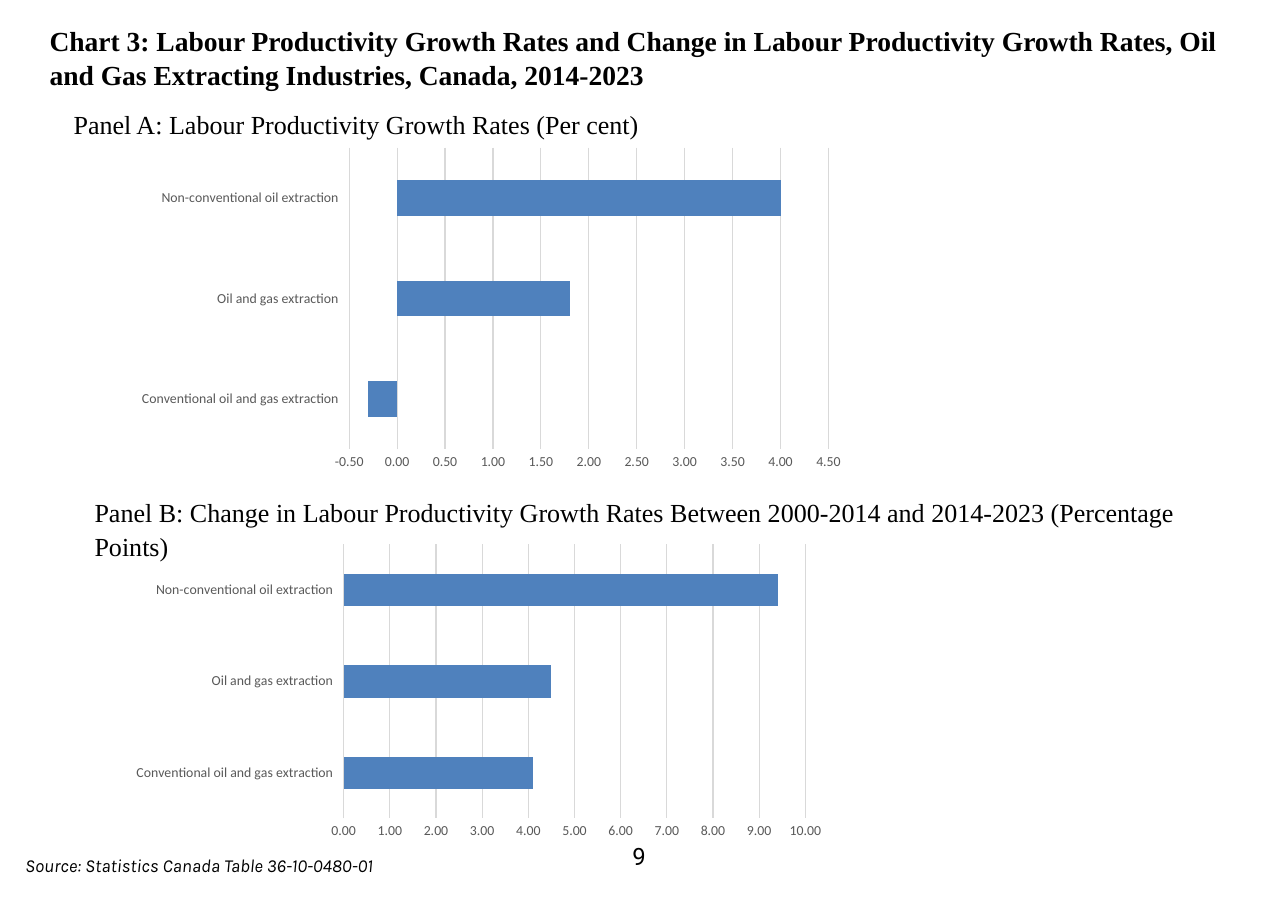
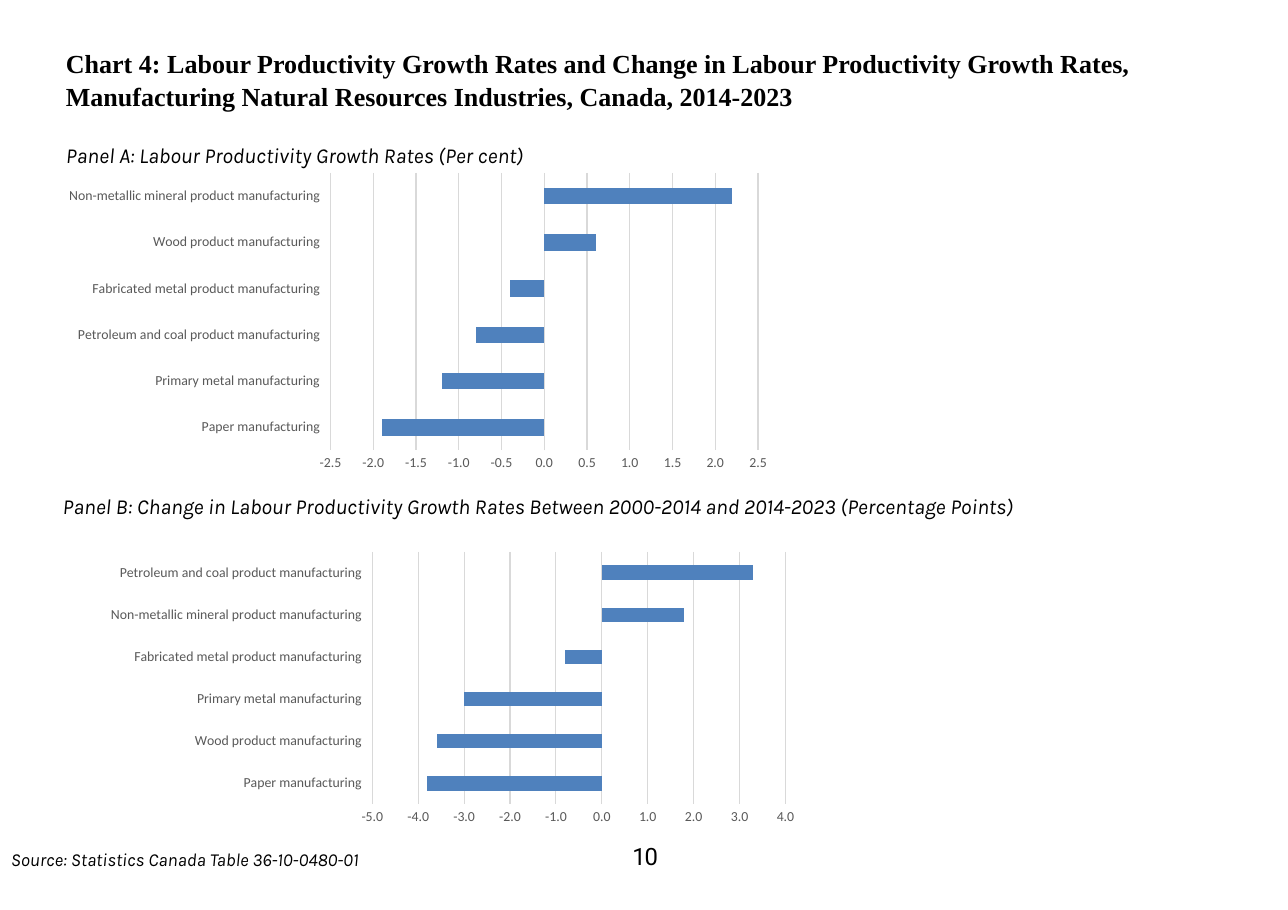
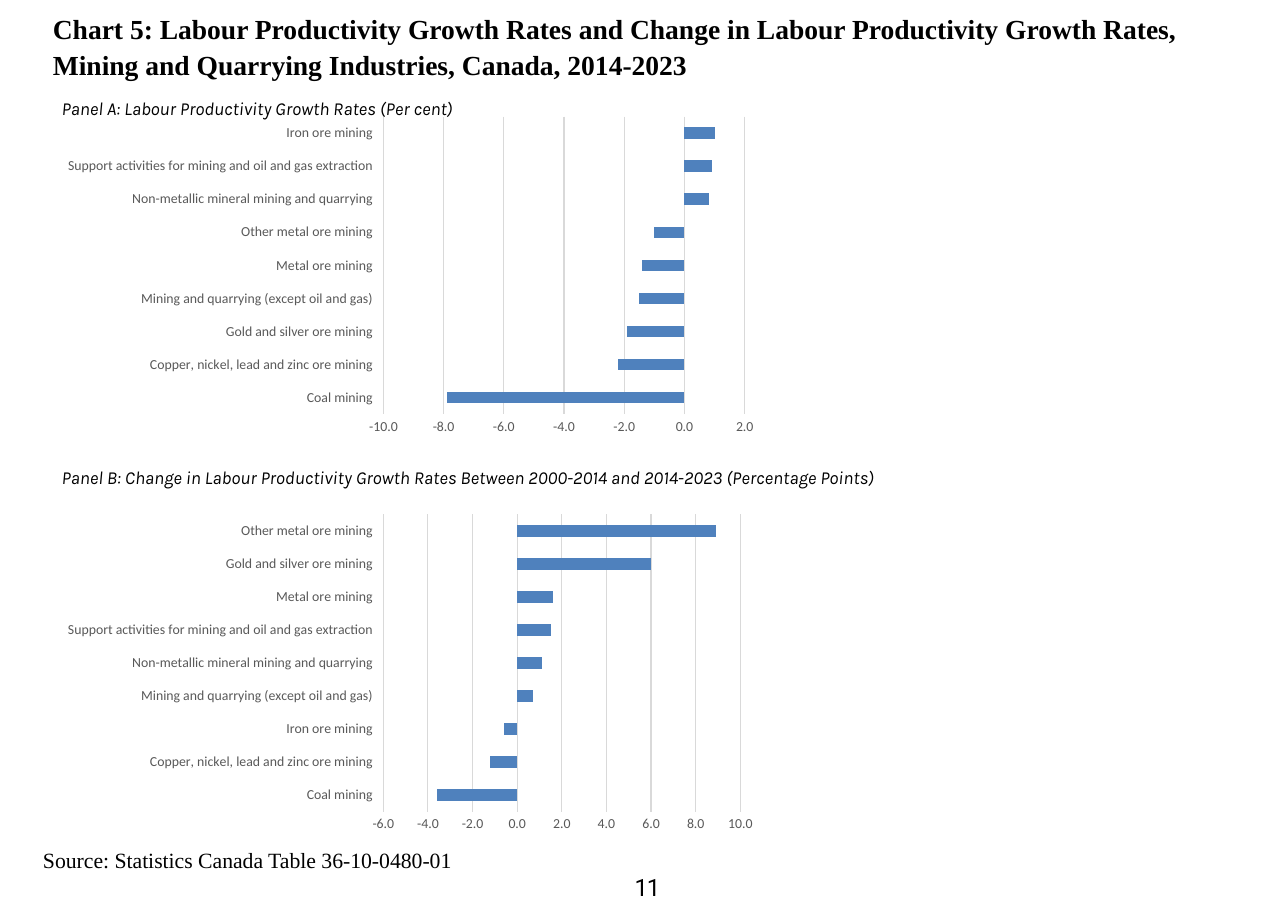
from dataclasses import dataclass

from pptx import Presentation
from pptx.chart.data import CategoryChartData
from pptx.dml.color import RGBColor
from pptx.enum.chart import XL_CHART_TYPE, XL_TICK_LABEL_POSITION, XL_TICK_MARK
from pptx.oxml import parse_xml
from pptx.oxml.ns import nsdecls, qn
from pptx.util import Inches, Pt


@dataclass(frozen=True)
class Theme:
    """Colours, fonts and type sizes shared by all slides."""
    text: str = "000000"
    label: str = "595959"
    grid: str = "D9D9D9"
    bar: str = "4F81BD"
    paper: str = "FFFFFF"
    serif: str = "Times New Roman"
    sans: str = "Karla"
    number: str = "Roboto"
    chart: str = "Calibri"
    title_size: float = 18
    number_size: float = 15.6
    source_size: float = 12
    axis_size: float = 9
    line: float = 0.75


T = Theme()
INSET = (0.1, 0.05)
PANEL_A = "Panel A: Labour Productivity Growth Rates (Per cent)"
PANEL_B = ("Panel B: Change in Labour Productivity Growth Rates Between "
           "2000-2014 and 2014-2023 (Percentage Points)")
TITLE = ("Chart {}: Labour Productivity Growth Rates and Change in Labour "
         "Productivity Growth Rates, {} Industries, Canada, 2014-2023")
SOURCE = "Source: Statistics Canada Table 36-10-0480-01"


def add_text(s, text, at, size, font, bold=False, italic=False, inset=INSET,
             spacing=None, before=0, indent=0, tracking=0):
    """Add a one-paragraph text box; at is left, top, width, height."""
    tf = s.shapes.add_textbox(*map(Inches, at)).text_frame
    tf.word_wrap = True
    tf.margin_left = tf.margin_right = Inches(inset[0])
    tf.margin_top = tf.margin_bottom = Inches(inset[1])
    p = tf.paragraphs[0]
    p.line_spacing = spacing
    p.space_before = Pt(before)
    if indent:
        pPr = p._p.get_or_add_pPr()
        pPr.set("marL", str(Inches(indent)))
        pPr.set("indent", "0")
    r = p.add_run()
    r.text = text
    style_font(r.font, size, font, T.text)
    r.font.bold, r.font.italic = bold, italic
    if tracking:
        r._r.get_or_add_rPr().set("spc", str(round(tracking * 100)))


def style_font(font, size, name, color):
    font.size, font.name = Pt(size), name
    font.color.rgb = RGBColor.from_string(color)


def style_line(line):
    line.color.rgb = RGBColor.from_string(T.grid)
    line.width = Pt(T.line)


class Deck:
    """Holds the presentation, its style and the current slide."""

    def __init__(self):
        self.prs = Presentation()
        self.prs.slide_width, self.prs.slide_height = Inches(11.69), Inches(8.26)
        self.s = None

    def slide(self):
        self.s = self.prs.slides.add_slide(self.prs.slide_layouts[6])
        fill = self.s.background.fill
        fill.solid()
        fill.fore_color.rgb = RGBColor.from_string(T.paper)

    def title(self, number, industries, at, size=T.title_size, spacing=1.07, **fmt):
        add_text(self.s, TITLE.format(number, industries), at, size, T.serif,
                 bold=True, spacing=spacing, **fmt)

    def panel(self, text, at, size, font=T.sans, spacing=1.07):
        add_text(self.s, text, at, size, font, italic=font == T.sans, spacing=spacing)

    def source(self, at, size=T.source_size, font=T.sans, **fmt):
        add_text(self.s, SOURCE, at, size, font, italic=font == T.sans, **fmt)

    def page_number(self, number, left=5.66, top=7.64):
        add_text(self.s, str(number), (left, top, 0.34, 0.26), T.number_size,
                 T.number, inset=(0, 0), before=0.5, indent=0.08, tracking=-0.7)

    def bar_chart(self, at, plot, scale, rows, fmt="0.0"):
        """plot is the plot area's left offset and width; scale is min, max, step."""
        data = CategoryChartData()
        data.categories = [name for name, _ in rows]
        data.add_series("Series 1", [value for _, value in rows])
        chart = self.s.shapes.add_chart(
            XL_CHART_TYPE.BAR_CLUSTERED, *map(Inches, at), data).chart
        chart.has_legend = chart.has_title = False
        style_font(chart.font, T.axis_size, T.chart, T.label)

        # Bars
        bars = chart.plots[0]
        bars.gap_width, bars.vary_by_categories = 182, False
        series = bars.series[0]
        series.invert_if_negative = False
        series.format.fill.solid()
        series.format.fill.fore_color.rgb = RGBColor.from_string(T.bar)

        # Axes
        cat, val = chart.category_axis, chart.value_axis
        for axis in (cat, val):
            axis.major_tick_mark = axis.minor_tick_mark = XL_TICK_MARK.NONE
            style_font(axis.tick_labels.font, T.axis_size, T.chart, T.label)
        cat.tick_label_position = XL_TICK_LABEL_POSITION.LOW
        style_line(cat.format.line)
        val.minimum_scale, val.maximum_scale, val.major_unit = scale
        val.tick_labels.number_format = fmt
        val.tick_labels.number_format_is_linked = False
        val.format.line.fill.background()
        val.has_major_gridlines = True
        style_line(val.major_gridlines.format.line)
        self.place_plot(chart, at, plot)

    @staticmethod
    def place_plot(chart, at, plot):
        """Fix the plot area, leaving room for the value labels below."""
        _, _, width, height = at
        top, bottom = 0.05, 0.25
        sizes = {"x": plot[0] / width, "y": top / height,
                 "w": plot[1] / width, "h": (height - top - bottom) / height}
        parts = "".join(f'<c:{k} val="{v:.4f}"/>' for k, v in sizes.items())
        area = chart.element.find(".//" + qn("c:plotArea"))
        for old in area.findall(qn("c:layout")):
            area.remove(old)
        area.insert(0, parse_xml(
            f'<c:layout {nsdecls("c")}><c:manualLayout>'
            '<c:layoutTarget val="inner"/><c:xMode val="edge"/><c:yMode val="edge"/>'
            f'{parts}</c:manualLayout></c:layout>'))


# Category names, from the bottom bar up
OIL = ("Conventional oil and gas extraction", "Oil and gas extraction",
       "Non-conventional oil extraction")
PAPER, PRIMARY, PETROLEUM, FABRICATED, WOOD, MINERAL = (
    f"{name} manufacturing" for name in (
        "Paper", "Primary metal", "Petroleum and coal product",
        "Fabricated metal product", "Wood product", "Non-metallic mineral product"))
COAL, COPPER, GOLD = ("Coal mining", "Copper, nickel, lead and zinc ore mining",
                      "Gold and silver ore mining")
QUARRY, METAL, OTHER = ("Mining and quarrying (except oil and gas)",
                        "Metal ore mining", "Other metal ore mining")
NONMETAL, SUPPORT, IRON = (
    "Non-metallic mineral mining and quarrying",
    "Support activities for mining and oil and gas extraction", "Iron ore mining")


def oil_and_gas(d):
    d.slide()
    d.title(3, "Oil and Gas Extracting", (0.43, 0.2, 10.83, 0.97), spacing=1.03,
            inset=(0, 0.01), before=0.7, indent=0.02)
    d.panel(PANEL_A, (0.57, 0.94, 9.36, 0.4), 17, T.serif, spacing=None)
    d.page_number(9)
    d.panel(PANEL_B, (0.76, 4.44, 10.5, 0.69), 17, T.serif)
    d.source((0.13, 7.7, 5.85, 0.3))
    d.bar_chart((1.1, 1.29, 6.67, 3.04), (2.07, 4.35), (-0.5, 4.5, 0.5),
                list(zip(OIL, (-0.3, 1.8, 4))), fmt="0.00")
    d.bar_chart((1.11, 4.89, 6.48, 2.79), (2.01, 4.19), (0, 10, 1),
                list(zip(OIL, (4.1, 4.5, 9.4))), fmt="0.00")


def manufacturing(d):
    d.slide()
    d.title(4, "Manufacturing Natural Resources", (0.5, 0.36, 10.7, 0.7), size=17)
    d.page_number(10)
    d.panel(PANEL_A, (0.5, 1.22, 5.85, 0.34), 14)
    d.bar_chart((0.47, 1.52, 6.62, 2.82), (2.53, 3.88), (-2.5, 2.5, 0.5), [
        (PAPER, -1.9), (PRIMARY, -1.2), (PETROLEUM, -0.8),
        (FABRICATED, -0.4), (WOOD, 0.6), (MINERAL, 2.2)])
    d.panel(PANEL_B, (0.47, 4.41, 10.48, 0.34), 14)
    d.bar_chart((0.85, 4.96, 6.5, 2.59), (2.53, 3.75), (-5, 4, 1), [
        (PAPER, -3.8), (WOOD, -3.6), (PRIMARY, -3),
        (FABRICATED, -0.8), (MINERAL, 1.8), (PETROLEUM, 3.3)])
    d.source((0, 7.65, 5.85, 0.3))


def mining(d):
    d.slide()
    d.title(5, "Mining and Quarrying", (0.48, 0.08, 10.74, 0.64), inset=(0, 0.01))
    d.source((0.37, 7.67, 5.92, 0.26), 14.2, T.serif, inset=(0, 0.02),
             before=1.5, indent=0.02)
    d.page_number(11, 5.68, 7.92)
    d.panel(PANEL_A, (0.46, 0.82, 5.85, 0.31), 12)
    d.bar_chart((0.47, 1.01, 6.51, 3), (3.01, 3.28), (-10, 2, 2), [
        (COAL, -7.9), (COPPER, -2.2), (GOLD, -1.9), (QUARRY, -1.5), (METAL, -1.4),
        (OTHER, -1), (NONMETAL, 0.8), (SUPPORT, 0.9), (IRON, 1)])
    d.panel(PANEL_B, (0.46, 4.17, 8.55, 0.31), 12)
    d.bar_chart((0.46, 4.62, 6.5, 3), (3.02, 3.24), (-6, 10, 2), [
        (COAL, -3.6), (COPPER, -1.2), (IRON, -0.6), (QUARRY, 0.7), (NONMETAL, 1.1),
        (SUPPORT, 1.5), (METAL, 1.6), (GOLD, 6), (OTHER, 8.9)])


def main():
    d = Deck()
    for build in (oil_and_gas, manufacturing, mining):
        build(d)
    d.prs.save("out.pptx")


if __name__ == "__main__":
    main()
